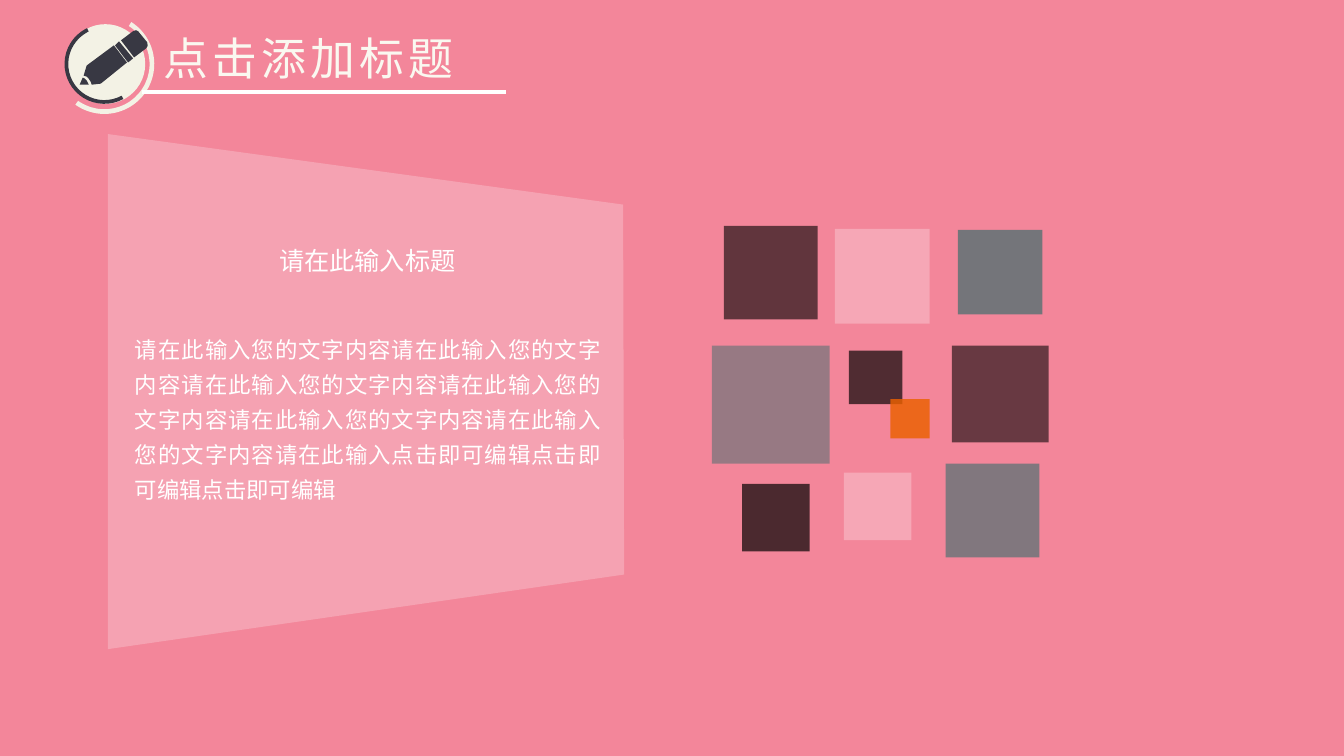
from lxml.etree import SubElement
from pptx import Presentation
from pptx.dml.color import RGBColor
from pptx.enum.shapes import MSO_CONNECTOR, MSO_SHAPE
from pptx.enum.text import MSO_AUTO_SIZE, PP_ALIGN
from pptx.oxml.ns import qn
from pptx.util import Inches, Pt

THEME = {
    "font": "Noto Sans CJK SC",
    "pink": "F3869A", "white": "FFFFFF", "ivory": "FAF8F0", "cream": "F3F2E5",
    "ink": "383843", "black": "000000", "teal": "3C6E6D", "orange": "EB6100",
    "title": 32, "heading": 18, "body": 16, "rule": 3,
}

PANEL = [(1.07, 1.33), (6.18, 2.03), (6.19, 5.7), (1.07, 6.44)]
PANEL_OPACITY = 24

# text, box, size, colour, wrap, line spacing, letter spacing in points
TEXTS = [
    ("请在此输入您的文字内容" * 6 + "请在此输入" + "点击即可编辑" * 3,
     (1.24, 3.21, 4.82, 1.85), "body", "white", True, 1.3, 0),
    ("请在此输入标题", (2.67, 2.38, 1.97, 0.4), "heading", "white", False, 1, 0),
    ("点击添加标题", (1.52, 0.26, 3.31, 0.64), "title", "ivory", True, 1, 3),
]

BADGE = (0.65, 0.24, 0.79)
# left, top, size, rotation, colour
RINGS = [
    (0.64, 0.24, 0.79, 241.5, "ink"),
    (0.54, 0.14, 0.99, 122.7, "cream"),
]
RING_ADJUSTMENTS = (108, 1.671, 0.047)
PENCIL = {
    "eraser": [(1.35, 0.3), (1.32, 0.31), (1.2, 0.4), (1.33, 0.57), (1.45, 0.48),
               (1.465, 0.455), (1.46, 0.42), (1.37, 0.31)],
    "band": [(1.18, 0.41), (1.14, 0.45), (1.27, 0.62), (1.32, 0.58)],
    "barrel": [(1.13, 0.45), (0.86, 0.65), (0.83, 0.75), (0.86, 0.76), (0.88, 0.78),
               (0.9, 0.81), (0.91, 0.84), (1, 0.83), (1.26, 0.62)],
    "tip": [(0.82, 0.77), (0.79, 0.84), (0.88, 0.84), (0.86, 0.8), (0.84, 0.78)],
}
TITLE_RULE = (1.41, 0.91, 5.02, 0.91)

# left, top, side, colour, opacity
SQUARES = [
    (7.18, 2.24, 0.93, "black", 60),
    (8.28, 2.27, 0.94, "white", 28),
    (8.42, 3.48, 0.53, "black", 67),
    (9.44, 3.43, 0.96, "black", 57),
    (9.5, 2.28, 0.84, "teal", 69),
    (7.06, 3.43, 1.17, "teal", 50),
    (9.38, 4.6, 0.93, "teal", 62),
    (8.83, 3.96, 0.39, "orange", 82),
    (7.36, 4.8, 0.67, "black", 69),
    (8.37, 4.69, 0.67, "white", 28),
]


def color(name):
    return RGBColor.from_string(THEME[name])


def paint(shape, fill, opacity=100):
    """Give the shape a flat fill with no outline or shadow."""
    shape.shadow.inherit = False
    shape.line.fill.background()
    shape.fill.solid()
    shape.fill.fore_color.rgb = color(fill)
    if opacity < 100:
        tint = shape.fill._xPr.find(qn("a:solidFill"))[0]
        SubElement(tint, qn("a:alpha")).set("val", str(opacity * 1000))


def add_square(slide, preset, left, top, side, fill, opacity=100):
    """Add a preset shape whose width and height are equal."""
    shape = slide.shapes.add_shape(preset, *map(Inches, (left, top, side, side)))
    paint(shape, fill, opacity)
    return shape


def add_outline(slide, points, fill, opacity=100):
    start, *rest = [(Inches(x), Inches(y)) for x, y in points]
    builder = slide.shapes.build_freeform(*start)
    builder.add_line_segments(rest, close=True)
    paint(builder.convert_to_shape(), fill, opacity)


def add_text(slide, words, box, size, ink, wrap, line_spacing, letter_spacing):
    frame = slide.shapes.add_textbox(*map(Inches, box)).text_frame
    paragraph = frame.paragraphs[0]
    run = paragraph.add_run()
    run.text = words
    run.font.color.rgb = color(ink)
    formats = [
        (frame, {"word_wrap": wrap, "auto_size": MSO_AUTO_SIZE.SHAPE_TO_FIT_TEXT}),
        (paragraph, {"alignment": PP_ALIGN.JUSTIFY, "line_spacing": line_spacing}),
        (run.font, {"size": Pt(THEME[size]), "name": THEME["font"]}),
    ]
    for target, values in formats:
        for name, value in values.items():
            setattr(target, name, value)
    properties = run.font._element
    SubElement(properties, qn("a:ea")).set("typeface", THEME["font"])
    if letter_spacing:
        properties.set("spc", str(letter_spacing * 100))


def add_rule(slide, ends):
    rule = slide.shapes.add_connector(MSO_CONNECTOR.STRAIGHT, *map(Inches, ends))
    rule.line.color.rgb = color("white")
    rule.line.width = Pt(THEME["rule"])
    SubElement(rule._element.spPr, qn("a:effectLst"))


def add_badge(slide):
    add_square(slide, MSO_SHAPE.OVAL, *BADGE, "cream")
    for left, top, side, rotation, fill in RINGS:
        ring = add_square(slide, MSO_SHAPE.BLOCK_ARC, left, top, side, fill)
        ring.rotation = rotation
        for index, value in enumerate(RING_ADJUSTMENTS):
            ring.adjustments[index] = value
    for points in PENCIL.values():
        add_outline(slide, points, "ink")


def main():
    deck = Presentation()
    deck.slide_width, deck.slide_height = Inches(13.33), Inches(7.5)
    slide = deck.slides.add_slide(deck.slide_layouts[6])
    slide.background.fill.solid()
    slide.background.fill.fore_color.rgb = color("pink")

    add_outline(slide, PANEL, "white", PANEL_OPACITY)
    for text in TEXTS:
        add_text(slide, *text)
    add_badge(slide)
    add_rule(slide, TITLE_RULE)
    for square in SQUARES:
        add_square(slide, MSO_SHAPE.RECTANGLE, *square)
    deck.save("out.pptx")


if __name__ == "__main__":
    main()
